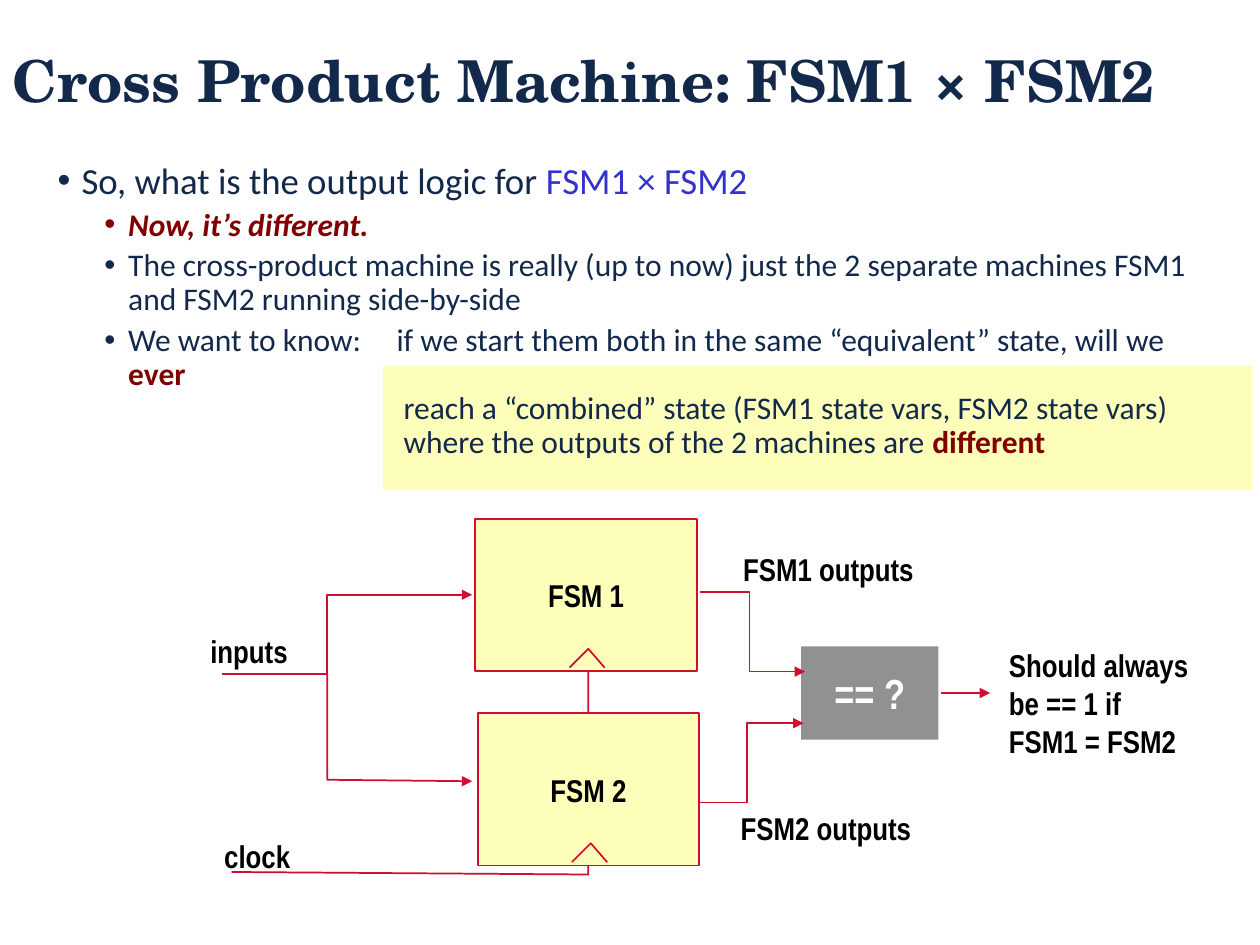
import pptx
import pptx.util
import pptx.dml.color
import pptx.enum.shapes
import pptx.enum.text
import pptx.oxml
import pptx.oxml.ns

Cm, Pt = pptx.util.Cm, pptx.util.Pt
NAVY, BLUE, MAROON = "13294B", "3333CC", "800000"
RED, YELLOW, GREY, BLACK, WHITE = "CF0E30", "FCFEB9", "919191", "000000", "FFFFFF"

# Content: each bullet is (level, runs), each run is (text, colour, bold, italic)
TITLE = "Cross Product Machine: FSM1 × FSM2"
BULLETS = [
    (0, [("So, what is the output logic for ", NAVY, False, False),
         ("FSM1 × FSM2", BLUE, False, False)]),
    (1, [("Now, it’s different.", MAROON, True, True)]),
    (1, [("The cross-product machine is really (up to now) just the 2 separate "
          "machines FSM1 and FSM2 running side-by-side", NAVY, False, False)]),
    (1, [("We want to know:\tif we start them both in the same “equivalent” state, "
          "will we ", NAVY, False, False),
         ("ever\n", MAROON, True, False),
         ("\t reach a “combined” state (FSM1 state vars, FSM2 state vars)\n"
          "\t where the outputs of the 2 machines are ", NAVY, False, False),
         ("different", MAROON, True, False)]),
]
# Per level: size in points, space before in points, left margin in cm
LEVELS = [(21, 7.5, 0.48), (18, 3.8, 1.42)]
HANGING, TAB_STOP = 0.48, 6.83

# Diagram, in cm
HIGHLIGHT = (7.72, 7.37, 17.53, 2.51)
MACHINES = [("FSM 1", 9.58, 10.46), ("FSM 2", 9.63, 14.38)]
MACHINE_SIZE = (4.47, 3.07)
CLOCK_NOTCH = [(1.9, 3.0), (2.28, 2.62), (2.61, 3.0)]
COMPARATOR = (16.15, 13.03, 2.77, 1.88)
CLOCK_WIRE = [(4.67, 17.58), (11.86, 17.63), (11.86, 13.54)]
SIGNAL_WIRES = [
    [(4.47, 13.59), (6.6, 13.59), (6.6, 11.99), (9.52, 11.99)],
    [(6.6, 13.59), (6.6, 15.72), (9.52, 15.75)],
    [(14.12, 11.94), (15.11, 11.94), (15.11, 13.54), (16.23, 13.54)],
    [(14.07, 16.18), (15.06, 16.18), (15.06, 14.58), (16.2, 14.58)],
]
RESULT_ARROW = (18.97, 13.97, 19.96, 13.97)
LABELS = [
    ("inputs", 3.99, 12.62, 2.08, 1.02),
    ("clock", 4.27, 16.74, 1.96, 1.02),
    ("FSM1 outputs", 14.73, 10.97, 3.99, 1.02),
    ("FSM2 outputs", 14.68, 16.18, 3.99, 1.02),
    ("Should always\nbe == 1 if\nFSM1 = FSM2", 20.09, 12.9, 4.17, 2.57),
]


def paint(color_format, code):
    color_format.rgb = pptx.dml.color.RGBColor.from_string(code)


def fill(shape, code):
    shape.fill.solid()
    paint(shape.fill.fore_color, code)


def style(run, font, size, code, bold=True, italic=False):
    run.font.name, run.font.size = font, Pt(size)
    run.font.bold, run.font.italic = bold, italic
    paint(run.font.color, code)


def append_xml(parent, tag, **attributes):
    child = pptx.oxml.parse_xml(f"<{tag} {pptx.oxml.ns.nsdecls('a')}/>")
    for key, value in attributes.items():
        child.set(key, str(value))
    parent.append(child)
    return child


def outline(shape, arrow=False):
    shape.line.width = Pt(1)
    paint(shape.line.color, RED)
    if arrow:
        line = shape.element.spPr.find(pptx.oxml.ns.qn("a:ln"))
        append_xml(line, "a:tailEnd", type="triangle")


def write(shape, text, size, code, align):
    frame = shape.text_frame
    frame.text = text
    frame.word_wrap = False
    for paragraph in frame.paragraphs:
        paragraph.alignment = align
        for run in paragraph.runs:
            style(run, "Arial Narrow", size, code)


def block(slide, box, code, text="", size=18, text_code=BLACK, bordered=False):
    shape = slide.shapes.add_shape(
        pptx.enum.shapes.MSO_SHAPE.RECTANGLE, *[Cm(v) for v in box])
    shape.shadow.inherit = False
    fill(shape, code)
    if bordered:
        outline(shape)
    else:
        shape.line.fill.background()
    if text:
        shape.text_frame.vertical_anchor = pptx.enum.text.MSO_ANCHOR.MIDDLE
        write(shape, text, size, text_code, pptx.enum.text.PP_ALIGN.CENTER)


def wire(slide, points, arrow=False):
    corners = [(Cm(x), Cm(y)) for x, y in points]
    builder = slide.shapes.build_freeform(*corners[0])
    builder.add_line_segments(corners[1:], close=False)
    shape = builder.convert_to_shape()
    shape.shadow.inherit = False
    shape.fill.background()
    outline(shape, arrow)


def place(placeholder, left, top, width, height):
    placeholder.left, placeholder.top = Cm(left), Cm(top)
    placeholder.width, placeholder.height = Cm(width), Cm(height)
    placeholder.text_frame.auto_size = pptx.enum.text.MSO_AUTO_SIZE.NONE
    # Text goes in front of the highlight
    placeholder.element.getparent().append(placeholder.element)


def draw_diagram(slide):
    block(slide, HIGHLIGHT, YELLOW)
    wire(slide, CLOCK_WIRE)
    for name, left, top in MACHINES:
        block(slide, (left, top, *MACHINE_SIZE), YELLOW, name, bordered=True)
        wire(slide, [(left + x, top + y) for x, y in CLOCK_NOTCH])
    block(slide, COMPARATOR, GREY, "== ?", 24, WHITE)
    for points in SIGNAL_WIRES:
        wire(slide, points, arrow=True)

    result = slide.shapes.add_connector(
        pptx.enum.shapes.MSO_CONNECTOR.STRAIGHT, *[Cm(v) for v in RESULT_ARROW])
    outline(result, arrow=True)
    append_xml(result.element.spPr, "a:effectLst")

    for text, *box in LABELS:
        label = slide.shapes.add_textbox(*[Cm(v) for v in box])
        write(label, text, 18, BLACK, pptx.enum.text.PP_ALIGN.LEFT)


def write_title(title):
    place(title, 0, 0.64, 25.4, 2.11)
    title.text_frame.text = TITLE
    title.text_frame.vertical_anchor = pptx.enum.text.MSO_ANCHOR.MIDDLE
    heading = title.text_frame.paragraphs[0]
    heading.alignment = pptx.enum.text.PP_ALIGN.LEFT
    heading.line_spacing = 0.9
    style(heading.runs[0], "TeX Gyre Schola", 33, NAVY)


def write_bullets(body):
    place(body, 0.91, 3.15, 23.67, 8.74)
    for index, (level, runs) in enumerate(BULLETS):
        frame = body.text_frame
        paragraph = frame.add_paragraph() if index else frame.paragraphs[0]
        size, space, margin = LEVELS[level]
        paragraph.level = level
        paragraph.line_spacing = 0.9
        paragraph.space_before = Pt(space if index else 0)
        properties = paragraph._p.get_or_add_pPr()
        properties.set("marL", str(Cm(margin)))
        properties.set("indent", str(-Cm(HANGING)))
        append_xml(properties, "a:buFont", typeface="Arial")
        append_xml(properties, "a:buChar", char="•")
        if any("\t" in text for text, *_ in runs):
            tabs = append_xml(properties, "a:tabLst")
            append_xml(tabs, "a:tab", pos=Cm(TAB_STOP), algn="l")
        for text, code, bold, italic in runs:
            for line_index, line in enumerate(text.split("\n")):
                if line_index:
                    paragraph.add_line_break()
                if line:
                    run = paragraph.add_run()
                    run.text = line
                    style(run, "Calibri", size, code, bold, italic)


def main():
    deck = pptx.Presentation()
    deck.slide_width, deck.slide_height = Cm(25.4), Cm(19.05)
    slide = deck.slides.add_slide(deck.slide_layouts[1])
    draw_diagram(slide)
    write_title(slide.shapes.title)
    write_bullets(slide.placeholders[1])
    deck.save("out.pptx")


if __name__ == "__main__":
    main()
